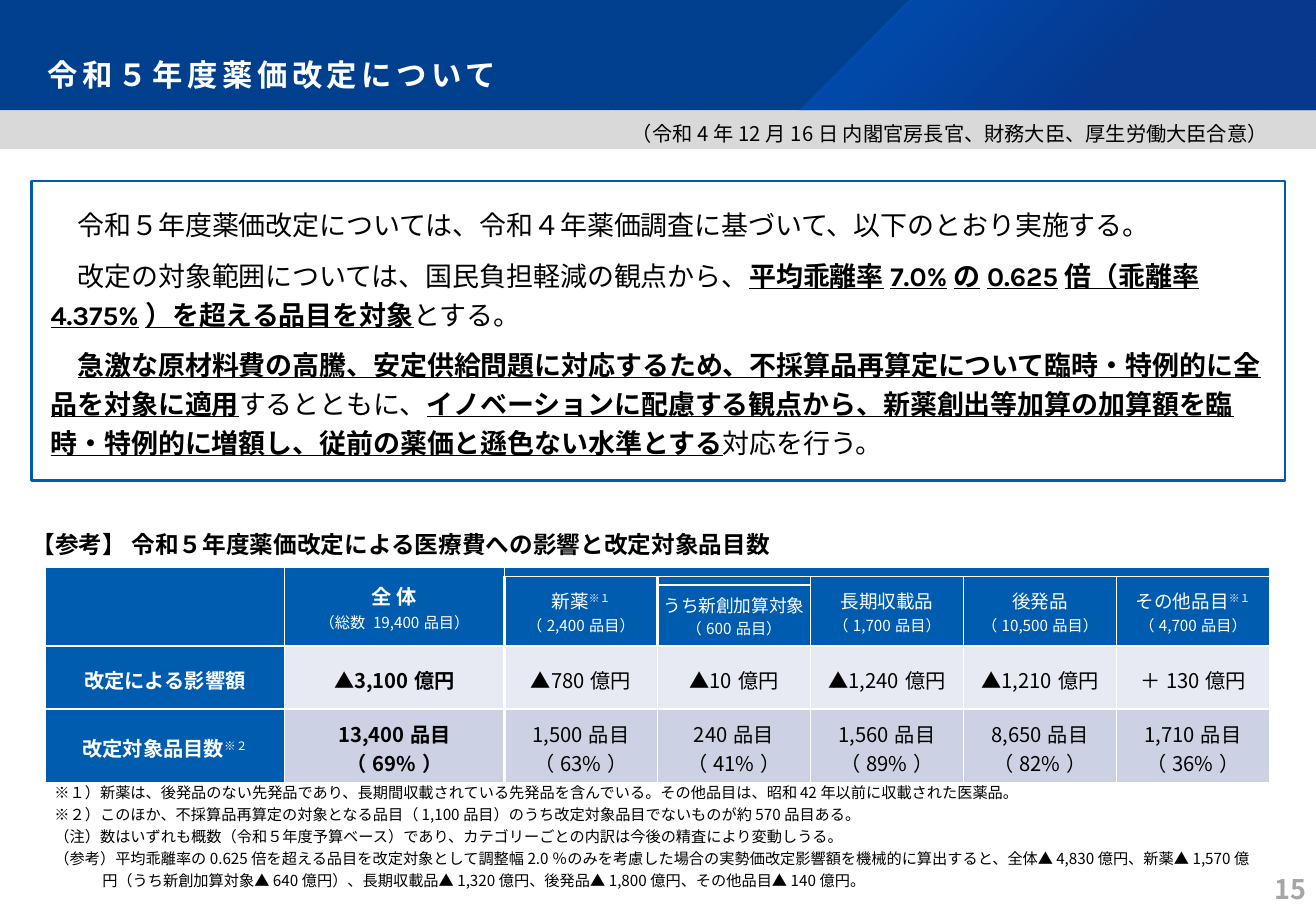
from dataclasses import dataclass

from lxml.etree import SubElement
from pptx import Presentation
from pptx.dml.color import RGBColor
from pptx.enum.dml import MSO_PATTERN
from pptx.enum.lang import MSO_LANGUAGE_ID
from pptx.enum.shapes import MSO_SHAPE
from pptx.enum.text import MSO_ANCHOR, PP_ALIGN
from pptx.oxml import parse_xml
from pptx.oxml.ns import nsdecls, qn
from pptx.util import Cm, Pt


@dataclass(frozen=True)
class Theme:
    display: str = "Karla"
    text: str = "Noto Sans CJK JP"
    white: str = "FFFFFF"
    black: str = "000000"
    blue: str = "005CAF"
    banner_front: str = "003579"
    banner_back: str = "004292"
    glow: str = "0064DF"
    glow_end: str = "0C338E"
    strip: str = "D9D9D9"
    amount_row: str = "E7EAF2"
    count_row: str = "CCD2E3"
    number: str = "A6A6A6"
    title_size: float = 18
    lead_size: float = 16
    heading_size: float = 14
    cell_size: float = 12
    header_size: float = 11
    narrow_size: float = 10.5
    note_size: float = 9
    empty_size: int = 1


class Page:
    def __init__(self, deck, theme):
        self.theme = theme
        self.slide = deck.slides.add_slide(deck.slide_layouts[5])
        self.shapes = self.slide.shapes

    def style(self, font, size, color, face=None, bold=False, underline=None, baseline=None, spacing=None):
        face = face or self.theme.text
        font.size, font.bold, font.underline, font.name = Pt(size), bold, underline, face
        font.color.rgb = RGBColor.from_string(color)
        font.language_id = MSO_LANGUAGE_ID.JAPANESE
        properties = font._rPr
        for key, value in (("baseline", baseline), ("spc", spacing)):
            if value:
                properties.set(key, str(value))
        SubElement(properties, qn("a:ea")).set("typeface", face)

    def compose(self, frame, paragraphs, margins=(0, 0, 0, 0), anchor=MSO_ANCHOR.MIDDLE,
                align=PP_ALIGN.LEFT, line=None, before=0, after=0, **base):
        """Each paragraph is a list of (text, style changes) pairs."""
        frame.word_wrap, frame.vertical_anchor = True, anchor
        (frame.margin_left, frame.margin_top,
         frame.margin_right, frame.margin_bottom) = map(Cm, margins)
        for index, runs in enumerate(paragraphs):
            paragraph = frame.add_paragraph() if index else frame.paragraphs[0]
            paragraph.alignment, paragraph.line_spacing = align, line
            paragraph.space_before, paragraph.space_after = Pt(before), Pt(after)
            self.style(paragraph.font, **base)
            for text, changes in runs:
                run = paragraph.add_run()
                run.text = text
                self.style(run.font, **{**base, **changes})
        return frame.paragraphs

    def indent(self, paragraph, left, first):
        properties = paragraph._p.get_or_add_pPr()
        properties.set("marL", str(left))
        properties.set("indent", str(first))

    def title(self, area, text, **options):
        title = self.shapes.title
        self.shapes._spTree.append(title._element)
        title.left, title.top, title.width, title.height = map(Cm, area)
        self.compose(title.text_frame, [[(text, {})]], **options)

    def box(self, area, fill=None, line=None):
        box = self.shapes.add_shape(MSO_SHAPE.RECTANGLE, *map(Cm, area))
        box.shadow.inherit = False
        box.fill.background()
        if fill:
            box.fill.solid()
            box.fill.fore_color.rgb = RGBColor.from_string(fill)
        box.line.fill.background()
        if line:
            box.line.color.rgb = RGBColor.from_string(line)
            box.line.width = Pt(1.25)
        return box

    def banner(self, area):
        banner = self.box(area)
        banner.fill.patterned()
        banner.fill.pattern = MSO_PATTERN.DARK_UPWARD_DIAGONAL
        banner.fill.fore_color.rgb = RGBColor.from_string(self.theme.banner_front)
        banner.fill.back_color.rgb = RGBColor.from_string(self.theme.banner_back)

    def glow(self, corners):
        points = [(Cm(x), Cm(y)) for x, y in corners]
        builder = self.shapes.build_freeform(*points[0])
        builder.add_line_segments(points[1:], close=True)
        glow = builder.convert_to_shape()
        glow.shadow.inherit = False
        glow.line.fill.background()
        stops = "".join(
            f'<a:gs pos="{pos}"><a:srgbClr val="{color}"><a:alpha val="{alpha}"/></a:srgbClr></a:gs>'
            for pos, color, alpha in ((0, self.theme.glow, 50000), (62000, self.theme.glow_end, 55000)))
        glow._element.spPr.find(qn("a:custGeom")).addnext(parse_xml(
            f'<a:gradFill {nsdecls("a")}><a:gsLst>{stops}</a:gsLst><a:path path="circle">'
            '<a:fillToRect r="100000" b="100000"/></a:path></a:gradFill>'))

    def text(self, area, paragraphs, **options):
        return self.compose(self.shapes.add_textbox(*map(Cm, area)).text_frame, paragraphs, **options)

    def table(self, left, top, widths, heights, merges):
        table = self.shapes.add_table(len(heights), len(widths), Cm(left), Cm(top),
                                      Cm(sum(widths)), Cm(sum(heights))).table
        table._tbl.tblPr.find(qn("a:tableStyleId")).text = "{2D5ABB26-0587-4C30-8999-92F81FD0307C}"
        for column, width in zip(table.columns, widths):
            column.width = Cm(width)
        for row, height in zip(table.rows, heights):
            row.height = Cm(height)
        for first, last in merges:
            table.cell(*first).merge(table.cell(*last))
        return table

    def cell(self, cell, fill, borders):
        cell.fill.solid()
        cell.fill.fore_color.rgb = RGBColor.from_string(fill)
        for index, (side, width) in enumerate(borders.items()):
            cell._tc.tcPr.insert(index, parse_xml(
                f'<a:ln{side} {nsdecls("a")} w="{Pt(width)}"><a:solidFill>'
                f'<a:srgbClr val="{self.theme.white}"/></a:solidFill></a:ln{side}>'))

    def cell_text(self, cell, paragraphs, margins, **options):
        self.compose(cell.text_frame, paragraphs, align=PP_ALIGN.CENTER, **options)
        cell.vertical_anchor = MSO_ANCHOR.MIDDLE
        cell.margin_left, cell.margin_top, cell.margin_right, cell.margin_bottom = map(Cm, margins)
        if not paragraphs:
            end = SubElement(cell.text_frame.paragraphs[0]._p, qn("a:endParaRPr"))
            end.set("sz", str(self.theme.empty_size * 100))


def main():
    theme = Theme()
    deck = Presentation()
    deck.slide_width, deck.slide_height = Cm(27.52), Cm(19.05)
    page = Page(deck, theme)
    strong = {"bold": True, "underline": True}

    # Banner, title and agreement date
    page.banner((0, 0, 27.52, 2.31))
    page.glow([(19.02, 0), (27.52, 0), (27.52, 2.31), (16.71, 2.31)])
    page.title((0, 0, 27.52, 2.31), "令和５年度薬価改定について", margins=(1, 0.91, 0.91, 0.36),
               anchor=MSO_ANCHOR.BOTTOM, line=0.9, size=theme.title_size, color=theme.white,
               face=theme.display, bold=True, spacing=270)
    agreement = page.box((0, 2.31, 27.52, 0.81), fill=theme.strip)
    page.compose(agreement.text_frame, [[("（令和4年12月16日 内閣官房長官、財務大臣、厚生労働大臣合意）", {})]],
                 margins=(0.25, 0.1, 1, 0.1), align=PP_ALIGN.RIGHT, line=1.3, before=10, after=8,
                 size=theme.cell_size, color=theme.black)

    # Policy statement
    policy = page.box((0.66, 3.78, 26.21, 6.27), line=theme.blue)
    statements = page.compose(policy.text_frame, [
        [("令和５年度薬価改定については、令和４年薬価調査に基づいて、以下のとおり実施する。", {})],
        [("改定の対象範囲については、国民負担軽減の観点から、", {}),
         ("平均乖離率7.0%の0.625倍（乖離率4.375%）を超える品目を対象", strong), ("とする。", {})],
        [("急激な原材料費の高騰、安定供給問題に対応するため、不採算品再算定について臨時・特例的に全品を対象に適用", strong),
         ("するとともに、", {}),
         ("イノベーションに配慮する観点から、新薬創出等加算の加算額を臨時・特例的に増額し、従前の薬価と遜色ない水準とする", strong),
         ("対応を行う。", {})],
    ], margins=(0.4, 0.2, 0.4, 0.2), line=1.2, size=theme.lead_size, color=theme.black, face=theme.display)
    for statement in statements:
        page.indent(statement, 0, Pt(theme.lead_size))
    for statement in statements[1:]:
        statement.space_before = Pt(7)

    # Impact table
    def header(name, count, mark="", size=theme.header_size, bold=False):
        marks = [(mark, {"size": size, "baseline": 30000})] if mark else []
        return [[(name, {"size": size, "bold": bold})] + marks, [(count, {})]]

    contents = {
        (0, 1): header("全 体", "（総数 19,400品目）", size=theme.cell_size, bold=True),
        (1, 2): header("新薬", "（2,400品目）", "※１"),
        (2, 3): header("うち新創加算対象", "（600品目）", size=theme.narrow_size),
        (1, 4): header("長期収載品", "（1,700品目）"),
        (1, 5): header("後発品", "（10,500品目）"),
        (1, 6): header("その他品目", "（4,700品目）", "※１"),
        (3, 0): [[("改定による影響額", {})]],
        (4, 0): [[("改定対象品目数", {"face": theme.display}), ("※２", {"bold": False, "baseline": 30000})]],
    }
    amounts = ["▲3,100億円", "▲780億円", "▲10億円", "▲1,240億円", "▲1,210億円", "＋130億円"]
    counts = [("13,400品目", "（69%）"), ("1,500品目", "（63%）"), ("240品目", "（41%）"),
              ("1,560品目", "（89%）"), ("8,650品目", "（82%）"), ("1,710品目", "（36%）")]
    for column, (amount, count) in enumerate(zip(amounts, counts), start=1):
        contents[3, column] = [[(amount, {})]]
        contents[4, column] = [[(line, {})] for line in count]

    merges = [((0, 0), (2, 0)), ((0, 1), (2, 1)), ((0, 2), (0, 6))]
    merges += [((1, column), (2, column)) for column in (2, 4, 5, 6)]
    impact = page.table(0.95, 11.87, [5, 4.6] + [3.2] * 5, [0.18, 0.18, 1.28, 1.32, 1.5], merges)
    open_sides = {(0, 1, "R"), (0, 2, "L"), (1, 2, "R"), (1, 3, "L")}
    heavy_sides = {(1, "R"), (2, "L")}
    row_fills = {3: theme.amount_row, 4: theme.count_row}
    for row in range(5):
        for column in range(7):
            cell = impact.cell(row, column)
            label = row < 3 or column == 0
            borders = {} if cell.is_spanned else {
                side: 2.25 if (column, side) in heavy_sides else 1
                for side in "LRTB" if (row, column, side) not in open_sides}
            page.cell(cell, theme.blue if label else row_fills[row], borders)
            lines = contents.get((row, column), [])
            page.cell_text(cell, lines, (0.1, 0.1 if row < 3 else 0.2, 0.1, 0.1) if lines else (0, 0, 0, 0),
                           size=theme.note_size if row < 3 else theme.cell_size,
                           color=theme.white if label else theme.black, bold=row > 2 and column < 2)

    # Table heading, notes and page number
    page.text((0.66, 10.95, 26.21, 0.86),
              [[("【参考】 令和５年度薬価改定による医療費への影響と改定対象品目数", {})]],
              size=theme.heading_size, color=theme.black, bold=True)
    notes = page.text((1.14, 16.31, 25.2, 2.41), [[(note, {})] for note in (
        "※１）新薬は、後発品のない先発品であり、長期間収載されている先発品を含んでいる。その他品目は、昭和42年以前に収載された医薬品。",
        "※２）このほか、不採算品再算定の対象となる品目（1,100品目）のうち改定対象品目でないものが約570品目ある。",
        "（注）数はいずれも概数（令和５年度予算ベース）であり、カテゴリーごとの内訳は今後の精査により変動しうる。",
        "（参考）平均乖離率の0.625倍を超える品目を改定対象として調整幅2.0％のみを考慮した場合の実勢価改定影響額を機械的に算出すると、"
        "全体▲4,830億円、新薬▲1,570億円（うち新創加算対象▲640億円）、長期収載品▲1,320億円、後発品▲1,800億円、その他品目▲140億円。",
    )], anchor=MSO_ANCHOR.TOP, line=1.2, size=theme.note_size, color=theme.black)
    page.indent(notes[-1], Cm(1), -Cm(1))
    page.text((25.76, 18.26, 1.76, 0.76), [[("15", {})]], margins=(0.2, 0.1, 0.2, 0.1),
              anchor=MSO_ANCHOR.BOTTOM, align=PP_ALIGN.RIGHT, size=theme.lead_size,
              color=theme.number, bold=True)

    deck.save("out.pptx")


if __name__ == "__main__":
    main()
